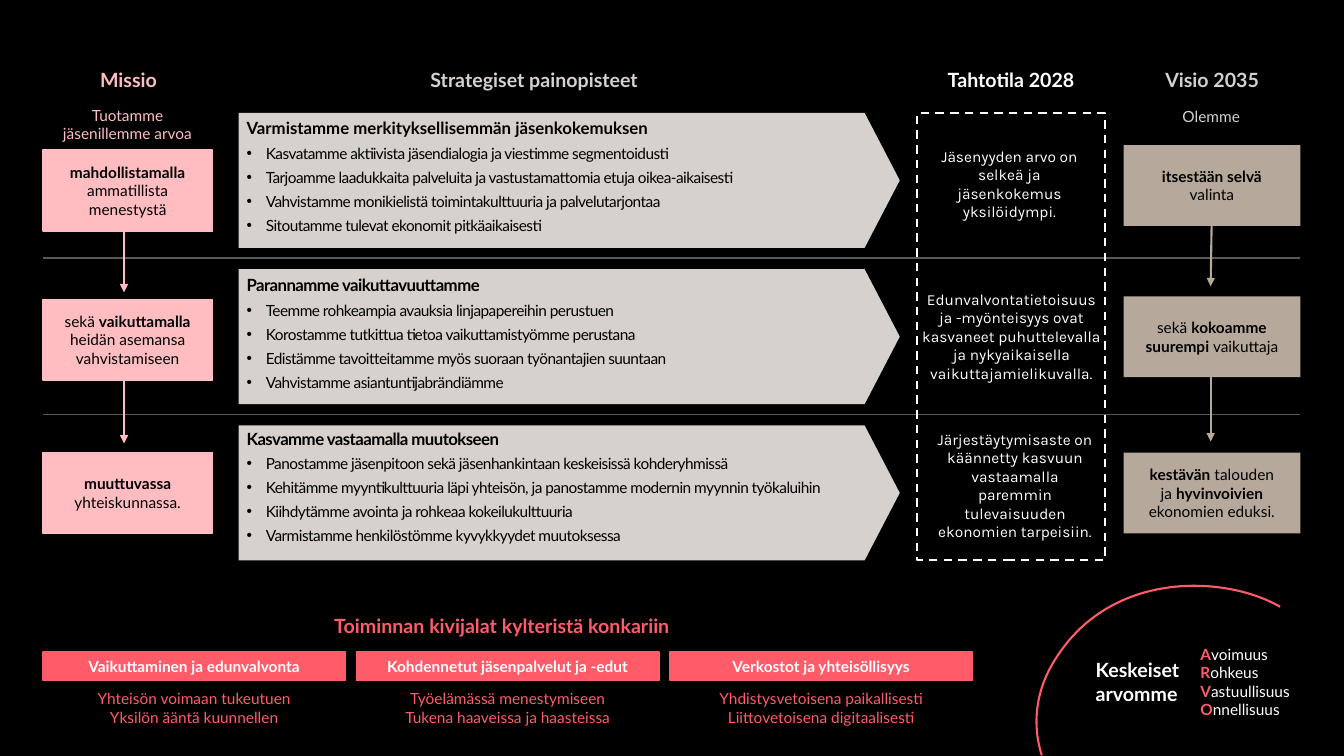
from typing import NamedTuple

from lxml import etree
from pptx import Presentation
from pptx.dml.color import RGBColor
from pptx.enum.dml import MSO_LINE
from pptx.enum.shapes import MSO_CONNECTOR, MSO_SHAPE
from pptx.enum.text import MSO_ANCHOR, PP_ALIGN
from pptx.oxml.ns import qn
from pptx.util import Inches, Pt

LEFT, CENTER = PP_ALIGN.LEFT, PP_ALIGN.CENTER
TOP, MIDDLE = MSO_ANCHOR.TOP, MSO_ANCHOR.MIDDLE
RECT, ARROW = MSO_SHAPE.RECTANGLE, MSO_SHAPE.RIGHT_ARROW
STRAIGHT, DASH = MSO_CONNECTOR.STRAIGHT, MSO_LINE.DASH

COLORS = {"black": "000000", "white": "FFFFFF", "pink": "FFBDC2", "sand": "D6D1CC",
          "taupe": "B6A99B", "coral": "FF5B69", "grey": "595959"}
BODY, HEADING, TITLE = 11, 12, 14
HAIR_INSET, TEXT_INSET, NO_INSET = (0.04, 0.04), (0.1, 0.05), (0, 0)


class Area(NamedTuple):
    """Left, top, width and height in percent of the slide."""
    x: float
    y: float
    w: float
    h: float


class Run(NamedTuple):
    text: str
    bold: bool = False
    color: str = "black"
    size: float = BODY
    font: str = "Lato"
    spacing: int = 0


class Para(NamedTuple):
    runs: list[Run]
    align: PP_ALIGN = CENTER
    after: float = 0
    line: float = 1
    bullet: bool = False


class Priority(NamedTuple):
    heading: Run
    actions: list[str]
    text_top: float
    line: float = 1


prs = Presentation()
prs.slide_width, prs.slide_height = Inches(13.333), Inches(7.5)
slide = prs.slides.add_slide(prs.slide_layouts[6])


def rgb(name: str) -> RGBColor:
    return RGBColor.from_string(COLORS[name])


def px(share: float) -> int:
    return round(prs.slide_width * share / 100)


def py(share: float) -> int:
    return round(prs.slide_height * share / 100)


def emu(area: Area) -> tuple[int, int, int, int]:
    return px(area.x), py(area.y), px(area.w), py(area.h)


def write(shape, paras: list[Para], inset=TEXT_INSET, anchor=TOP) -> None:
    frame = shape.text_frame
    frame.word_wrap, frame.vertical_anchor = True, anchor
    frame.margin_left = frame.margin_right = Inches(inset[0])
    frame.margin_top = frame.margin_bottom = Inches(inset[1])
    for i, para in enumerate(paras):
        p = frame.add_paragraph() if i else frame.paragraphs[0]
        p.alignment, p.space_after, p.line_spacing = para.align, Pt(para.after), para.line
        if para.bullet:
            props = p._p.get_or_add_pPr()
            props.set("marL", str(Inches(0.19)))
            props.set("indent", str(-Inches(0.19)))
            etree.SubElement(props, qn("a:buFont")).set("typeface", "Arial")
            etree.SubElement(props, qn("a:buChar")).set("char", "•")
        for run in para.runs:
            for j, part in enumerate(run.text.split("\n")):
                if j:
                    p.add_line_break()
                if not part:
                    continue
                r = p.add_run()
                r.text = part
                r.font.name, r.font.size, r.font.bold = run.font, Pt(run.size), run.bold
                r.font.color.rgb = rgb(run.color)
                if run.spacing:
                    r._r.get_or_add_rPr().set("spc", str(run.spacing))


def text(area: Area, paras: list[Para], inset=TEXT_INSET, anchor=TOP) -> None:
    write(slide.shapes.add_textbox(*emu(area)), paras, inset, anchor)


def block(area: Area, fill: str | None, line: str | None = None, kind=RECT, width: float = 1):
    shape = slide.shapes.add_shape(kind, *emu(area))
    shape.shadow.inherit = False
    if fill:
        shape.fill.solid()
        shape.fill.fore_color.rgb = rgb(fill)
    else:
        shape.fill.background()
    if line:
        shape.line.color.rgb, shape.line.width = rgb(line), Pt(width)
    else:
        shape.line.fill.background()
    return shape


def connect(x1: float, y1: float, x2: float, y2: float, color: str,
            width: float, head: bool = False) -> None:
    link = slide.shapes.add_connector(STRAIGHT, px(x1), py(y1), px(x2), py(y2))
    link.line.color.rgb, link.line.width = rgb(color), Pt(width)
    if head:
        etree.SubElement(link.line._get_or_add_ln(), qn("a:tailEnd")).set("type", "triangle")
    etree.SubElement(link._element.spPr, qn("a:effectLst"))


def bezier(a, b, c, d, steps: int = 60) -> list[tuple[float, float]]:
    ts = [i / steps for i in range(steps + 1)]
    return [tuple((1 - t) ** 3 * p + 3 * t * (1 - t) ** 2 * q + 3 * t * t * (1 - t) * r + t ** 3 * s
                  for p, q, r, s in zip(a, b, c, d)) for t in ts]


slide.background.fill.solid()
slide.background.fill.fore_color.rgb = rgb("black")

# Arc around the values, down to the slide's lower edge
LEFTMOST = (78.3, 87.87)
arc = (bezier((82.05, 109.73), (77.85, 105.47), (75.6, 96.13), LEFTMOST)
       + bezier(LEFTMOST, (82.35, 75.33), (91.13, 76), (95.25, 80.27))[1:])
points = [(px(x), py(y)) for x, y in arc if y <= 100]
builder = slide.shapes.build_freeform(*points[0], scale=1.0)
builder.add_line_segments(points[1:], close=False)
values_arc = builder.convert_to_shape()
values_arc.shadow.inherit = False
values_arc.fill.background()
values_arc.line.color.rgb, values_arc.line.width = rgb("coral"), Pt(1.5)

# Column headings and lead-ins
for label, x, w, color in [("Missio", 4.65, 9.83, "pink"),
                           ("Strategiset painopisteet", 26.4, 26.7, "sand"),
                           ("Tahtotila 2028", 68.78, 12.9, "white"),
                           ("Visio 2035", 84.68, 11.03, "sand")]:
    text(Area(x, 8.33, w, 4.53), [Para([Run(label, True, color, TITLE)])])
text(Area(2.4, 14, 14.18, 4.93), [Para([Run("Tuotamme\njäsenillemme arvoa", color="pink")])], NO_INSET)
text(Area(83.18, 14.13, 13.88, 2.53), [Para([Run("Olemme", color="sand")])], NO_INSET)

# Strategic priorities
ROW_TOP, ROW_PITCH = 14.93, 20.67
TIGHT = -40
priorities = [
    Priority(Run("Varmistamme merkityksellisemmän jäsenkokemuksen", True, size=HEADING), [
        "Kasvatamme aktiivista jäsendialogia ja viestimme segmentoidusti",
        "Tarjoamme laadukkaita palveluita ja vastustamattomia etuja oikea-aikaisesti",
        "Vahvistamme monikielistä toimintakulttuuria ja palvelutarjontaa",
        "Sitoutamme tulevat ekonomit pitkäaikaisesti"], 15.6),
    Priority(Run("Parannamme vaikuttavuuttamme", True, size=HEADING, spacing=TIGHT), [
        "Teemme rohkeampia avauksia linjapapereihin perustuen",
        "Korostamme tutkittua tietoa vaikuttamistyömme perustana",
        "Edistämme tavoitteitamme myös suoraan työnantajien suuntaan",
        "Vahvistamme asiantuntijabrändiämme"], 36.4),
    Priority(Run("Kasvamme vastaamalla muutokseen", True, size=HEADING, spacing=TIGHT), [
        "Panostamme jäsenpitoon sekä jäsenhankintaan keskeisissä kohderyhmissä",
        "Kehitämme myyntikulttuuria läpi yhteisön, ja panostamme modernin myynnin työkaluihin",
        "Kiihdytämme avointa ja rohkeaa kokeilukulttuuria",
        "Varmistamme henkilöstömme kyvykkyydet muutoksessa"], 57.07, 0.9),
]
for row, item in enumerate(priorities):
    arrow = block(Area(17.75, ROW_TOP + row * ROW_PITCH, 49.2, 17.87), "sand", kind=ARROW)
    arrow.adjustments[0], arrow.adjustments[1] = 1, 0.26
    heading = Para([item.heading], LEFT, 3 if item.line < 1 else 4, item.line)
    actions = [Para([Run(a, spacing=TIGHT)], LEFT, 4, bullet=True) for a in item.actions]
    text(Area(18.35, item.text_top, 48.5, 16.5), [heading, *actions], NO_INSET)

# Mission and vision steps
mission = [(19.87, [Run("mahdollistamalla ", True), Run("ammatillista menestystä")]),
           (39.6, [Run("sekä "), Run("vaikuttamalla", True), Run(" heidän asemansa vahvistamiseen")]),
           (59.87, [Run("muuttuvassa ", True), Run("yhteiskunnassa.")])]
vision = [(19.2, [Run("itsestään selvä\n", True), Run("valinta")]),
          (39.2, [Run("sekä "), Run("kokoamme suurempi ", True), Run("vaikuttaja")]),
          (59.87, [Run("kestävän", True), Run(" talouden\nja "), Run("hyvinvoivien", True),
                   Run(" ekonomien eduksi.")])]
for steps, x, w, fill, line in [(mission, 3.2, 12.6, "pink", "pink"), (vision, 83.6, 13.15, "taupe", None)]:
    for y, runs in steps:
        write(block(Area(x, y, w, 10.7), fill, line), [Para(runs)], HAIR_INSET, MIDDLE)

# Goals for 2028
for area, goal in [
    (Area(69.15, 15.73, 11.93, 17.2), "Jäsenyyden arvo on selkeä ja jäsenkokemus yksilöidympi."),
    (Area(68.55, 34.53, 13.43, 19.87), "Edunvalvontatietoisuus ja -myönteisyys ovat kasvaneet "
                                       "puhuttelevalla ja nykyaikaisella vaikuttajamielikuvalla."),
    (Area(69.53, 58, 12, 12.4), "Järjestäytymisaste on käännetty kasvuun vastaamalla paremmin "
                                "tulevaisuuden ekonomien tarpeisiin."),
]:
    text(area, [Para([Run(goal, color="white", font="Karla")])], NO_INSET, MIDDLE)

# Foundations
text(Area(19.43, 80.53, 35.85, 4.53),
     [Para([Run("Toiminnan kivijalat kylteristä konkariin", True, "coral", TITLE)])])
for col, (name, *promises) in enumerate([
    ("Vaikuttaminen ja edunvalvonta", "Yhteisön voimaan tukeutuen", "Yksilön ääntä kuunnellen"),
    ("Kohdennetut jäsenpalvelut ja -edut", "Työelämässä menestymiseen", "Tukena haaveissa ja haasteissa"),
    ("Verkostot ja yhteisöllisyys", "Yhdistysvetoisena paikallisesti", "Liittovetoisena digitaalisesti"),
]):
    x = 3.2 + col * 23.33
    write(block(Area(x, 86.27, 22.5, 3.73), "coral", "coral"),
          [Para([Run(name, True, "white")])], anchor=MIDDLE)
    text(Area(x, 90.53, 22.5, 6.27), [Para([Run(promise, color="coral")]) for promise in promises])

# Values
text(Area(80.78, 86.4, 8.78, 7.6),
     [Para([Run(word, True, "white", TITLE)], LEFT) for word in ("Keskeiset", "arvomme")])
text(Area(88.58, 84.67, 10.8, 11.2),
     [Para([Run(value[0], True, "coral"), Run(value[1:], color="white")], LEFT)
      for value in ("Avoimuus", "Rohkeus", "Vastuullisuus", "Onnellisuus")])

# Row dividers, step arrows and the goal frame
for row in range(2):
    divider = 34.13 + row * ROW_PITCH
    connect(3.2, divider, 96.75, divider, "grey", 1)
    connect(9.23, 28.8 + row * 20, 9.23, 38.67 + row * 20, "pink", 1.5, True)
connect(90.15, 29.87, 90.08, 37.87, "taupe", 1.5, True)
connect(90.08, 48.4, 90.08, 58.4, "taupe", 1.5, True)
block(Area(68.25, ROW_TOP, 13.95, 59.2), None, "white", width=1.5).line.dash_style = DASH

prs.save("out.pptx")
